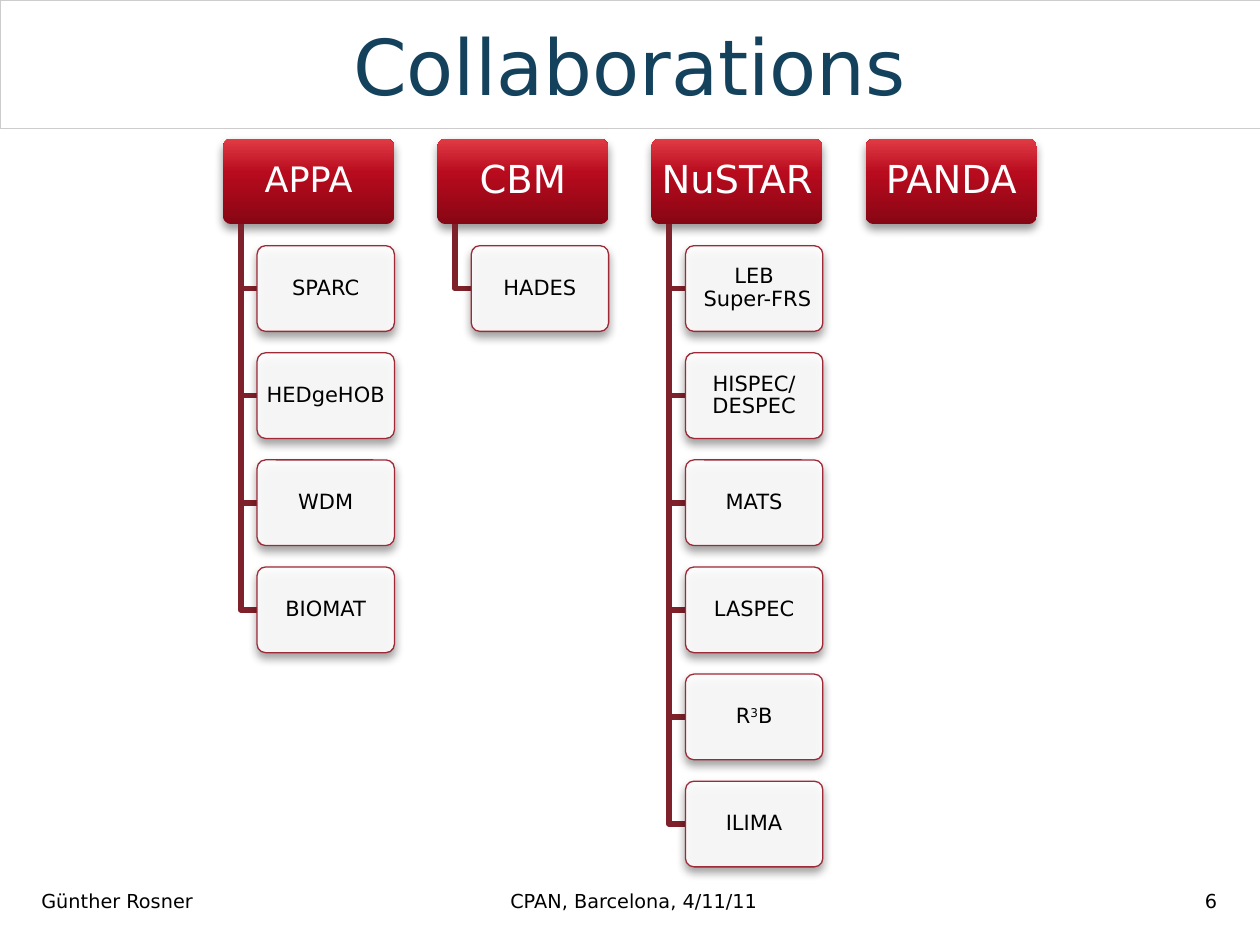
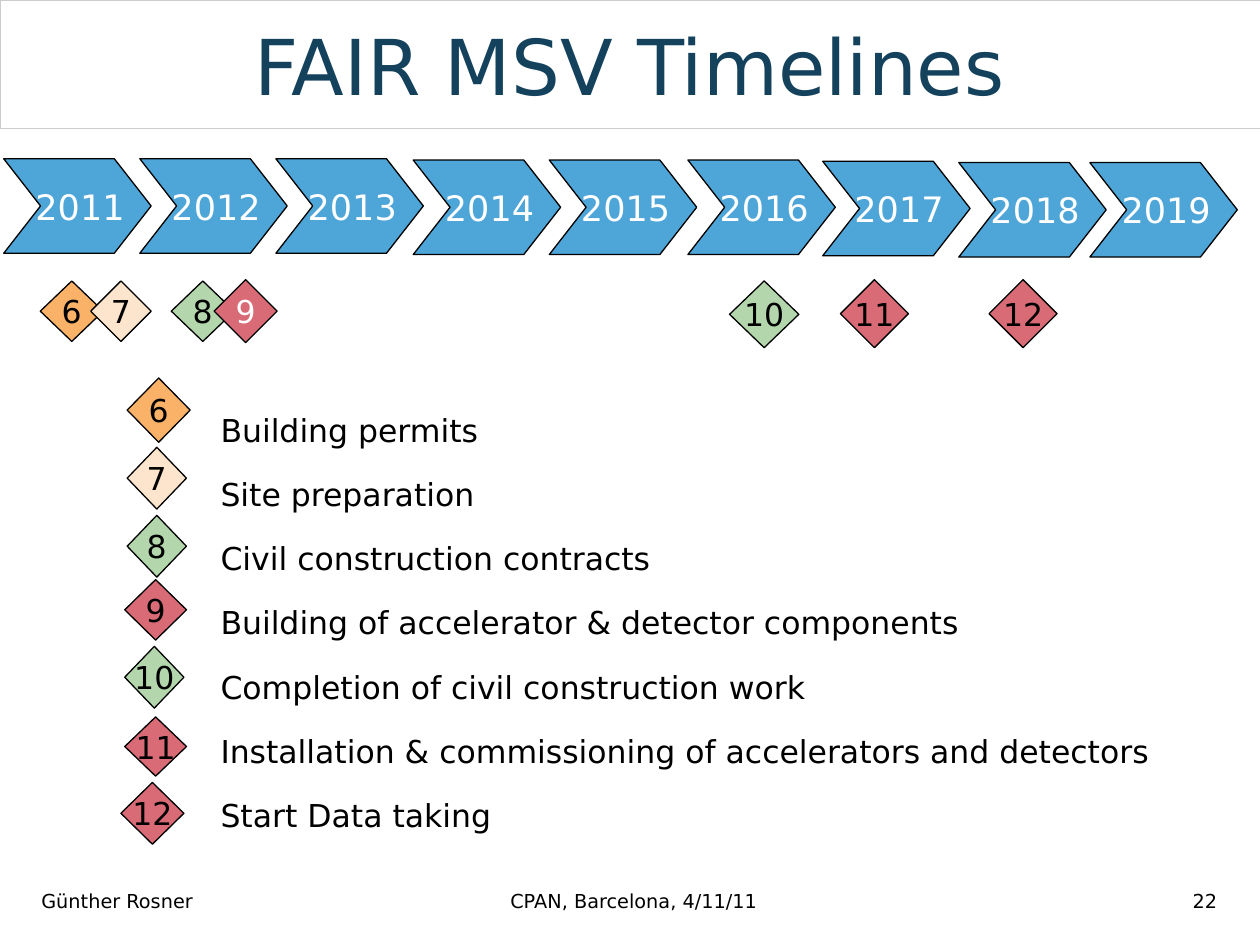
from dataclasses import dataclass

import lxml.etree
import pptx
import pptx.dml.color
import pptx.enum.shapes
import pptx.enum.text
import pptx.oxml.ns
import pptx.util

Inches = pptx.util.Inches
Pt = pptx.util.Pt
RGBColor = pptx.dml.color.RGBColor
Shapes = pptx.enum.shapes.MSO_SHAPE
Align = pptx.enum.text.PP_ALIGN
Anchor = pptx.enum.text.MSO_ANCHOR
qn = pptx.oxml.ns.qn

FONT = "DejaVu Sans"
BLACK = RGBColor(0x00, 0x00, 0x00)
WHITE = RGBColor(0xFF, 0xFF, 0xFF)
TITLE_BLUE = RGBColor(0x14, 0x42, 0x5D)
TITLE_BORDER = RGBColor(0xCC, 0xCC, 0xCC)
HEADER_STOPS = (
    (0, RGBColor(0x87, 0x06, 0x14)),
    (60, RGBColor(0xB8, 0x0B, 0x1E)),
    (100, RGBColor(0xE1, 0x3C, 0x45)),
)
BRANCH_RED = RGBColor(0x7F, 0x21, 0x2B)
CARD_RED = RGBColor(0x9F, 0x29, 0x36)
YEAR_BLUE = RGBColor(0x4E, 0xA5, 0xD8)
ORANGE = RGBColor(0xF9, 0xB2, 0x68)
PEACH = RGBColor(0xFD, 0xE5, 0xCD)
GREEN = RGBColor(0xB3, 0xD6, 0xAC)
ROSE = RGBColor(0xD9, 0x6B, 0x77)

TITLE_LAYOUT, LIST_LAYOUT = 5, 1
COLUMN_LEFT, COLUMN_STEP = 1.77, 1.7
HEADER_TOP, HEADER_WIDTH = 1.1, 1.36
BOX_HEIGHT = 0.68
CARD_TOP, CARD_STEP = 1.95, 0.85
CARD_INDENT, BRANCH_INDENT = 0.27, 0.14


@dataclass
class Box:
    left: float
    top: float
    width: float
    height: float

    def lengths(self) -> tuple:
        return tuple(Inches(v) for v in (self.left, self.top, self.width, self.height))


@dataclass
class Collaboration:
    name: str
    size: int
    members: tuple = ()


@dataclass
class Year:
    label: str
    left: float
    top: float


@dataclass
class Milestone:
    number: int
    box: Box
    color: RGBColor
    text_color: RGBColor = BLACK


COLLABORATIONS = (
    Collaboration("APPA", 20, ("SPARC", "HEDgeHOB", "WDM", "BIOMAT")),
    Collaboration("CBM", 22, ("HADES",)),
    Collaboration("NuSTAR", 22, ("LEB\n Super-FRS", "HISPEC/\nDESPEC", "MATS",
                                 "LASPEC", "R^3^B", "ILIMA")),
    Collaboration("PANDA", 22),
)
YEARS = (
    Year("2011", 0.03, 1.26), Year("2012", 1.11, 1.26), Year("2013", 2.19, 1.26),
    Year("2014", 3.28, 1.27), Year("2015", 4.36, 1.27), Year("2016", 5.46, 1.27),
    Year("2017", 6.53, 1.28), Year("2018", 7.61, 1.29), Year("2019", 8.65, 1.29),
)
MILESTONES = (
    Milestone(6, Box(0.32, 2.23, 0.5, 0.48), ORANGE),
    Milestone(7, Box(0.72, 2.23, 0.48, 0.48), PEACH),
    Milestone(8, Box(1.36, 2.23, 0.5, 0.48), GREEN),
    Milestone(9, Box(1.7, 2.22, 0.5, 0.5), ROSE, WHITE),
    Milestone(10, Box(5.79, 2.23, 0.55, 0.53), GREEN),
    Milestone(11, Box(6.67, 2.22, 0.54, 0.54), ROSE),
    Milestone(12, Box(7.85, 2.22, 0.54, 0.54), ROSE),
    Milestone(6, Box(1.01, 3, 0.5, 0.51), ORANGE),
    Milestone(7, Box(1.01, 3.55, 0.47, 0.49), PEACH),
    Milestone(8, Box(1.01, 4.09, 0.47, 0.49), GREEN),
    Milestone(9, Box(0.99, 4.6, 0.49, 0.48), ROSE),
    Milestone(10, Box(0.99, 5.13, 0.47, 0.49), GREEN),
    Milestone(11, Box(0.99, 5.69, 0.49, 0.47), ROSE),
    Milestone(12, Box(0.96, 6.21, 0.5, 0.49), ROSE),
)
MILESTONE_NAMES = (
    "Building permits",
    "Site preparation",
    "Civil construction contracts",
    "Building of accelerator & detector components",
    "Completion of civil construction work",
    "Installation & commissioning of accelerators and detectors",
    "Start Data taking",
)


def add_run(paragraph, text: str, size: int, color: RGBColor):
    run = paragraph.add_run()
    run.text = text
    run.font.name = FONT
    run.font.size = Pt(size)
    run.font.color.rgb = color
    return run


def add_rich_text(paragraph, text: str, size: int, color: RGBColor) -> None:
    for line_index, line in enumerate(text.split("\n")):
        if line_index:
            paragraph.add_line_break()
        for part_index, part in enumerate(line.split("^")):
            run = add_run(paragraph, part, size, color)
            if part_index % 2:
                run.font._element.set("baseline", "30000")


def write(shape, text: str, size: int, color: RGBColor, align=Align.CENTER,
          insets: tuple = (0.1, 0.05, 0.1, 0.05), wrap: bool = True):
    frame = shape.text_frame
    frame.word_wrap = wrap
    frame.auto_size = pptx.enum.text.MSO_AUTO_SIZE.NONE
    frame.vertical_anchor = Anchor.MIDDLE
    frame.margin_left, frame.margin_top, frame.margin_right, frame.margin_bottom = (
        Inches(inset) for inset in insets)
    paragraph = frame.paragraphs[0]
    paragraph.alignment = align
    add_rich_text(paragraph, text, size, color)
    return paragraph


def place(shape, box: Box) -> None:
    shape.left, shape.top, shape.width, shape.height = box.lengths()


def add_preset(slide, preset, box: Box, adjustment: float | None = None):
    shape = slide.shapes.add_shape(preset, *box.lengths())
    shape.shadow.inherit = False
    if adjustment is not None:
        shape.adjustments[0] = adjustment
    return shape


def outline(shape, color: RGBColor, width: float) -> None:
    shape.line.color.rgb = color
    shape.line.width = Pt(width)


def add_color(parent, color: RGBColor, alpha: int | None = None) -> None:
    element = lxml.etree.SubElement(parent, qn("a:srgbClr"), val=str(color))
    if alpha is not None:
        lxml.etree.SubElement(element, qn("a:alpha"), val=str(alpha * 1000))


def add_shadow(shape) -> None:
    effects = shape.element.spPr.find(qn("a:effectLst"))
    shadow = lxml.etree.SubElement(
        effects, qn("a:outerShdw"), blurRad=str(Pt(5.2)), dist=str(Pt(3)),
        dir="5400000", rotWithShape="0")
    add_color(shadow, BLACK, 40)


def fill_header(shape) -> None:
    shape.fill.gradient()
    shape.fill.gradient_angle = 90
    stops = shape.element.spPr.find(".//" + qn("a:gsLst"))
    for stop in list(stops):
        stops.remove(stop)
    for position, color in HEADER_STOPS:
        stop = lxml.etree.SubElement(stops, qn("a:gs"), pos=str(position * 1000))
        add_color(stop, color)
    shape.line.fill.background()


def add_slide(presentation, layout: int, title: str, number: int):
    slide = presentation.slides.add_slide(presentation.slide_layouts[layout])
    heading = slide.shapes.title
    place(heading, Box(0, 0, 10, 1.02))
    outline(heading, TITLE_BORDER, 0.25)
    write(heading, title, 44, TITLE_BLUE)
    for left, width, text, align in (
        (0.23, 2.33, "Günther Rosner", Align.LEFT),
        (2.74, 4.58, "CPAN, Barcelona, 4/11/11", Align.CENTER),
        (7.43, 2.33, str(number), Align.RIGHT),
    ):
        footer = slide.shapes.add_textbox(*Box(left, 6.95, width, 0.4).lengths())
        write(footer, text, 11, BLACK, align)
    return slide


def add_branch(slide, left: float, end_y: float) -> None:
    x, y = Inches(left + BRANCH_INDENT), Inches(HEADER_TOP + BOX_HEIGHT)
    builder = slide.shapes.build_freeform(x, y)
    builder.add_line_segments(
        [(x, Inches(end_y)), (Inches(left + CARD_INDENT), Inches(end_y))], close=False)
    branch = builder.convert_to_shape()
    branch.shadow.inherit = False
    branch.fill.background()
    outline(branch, BRANCH_RED, 3.35)


def add_card(slide, box: Box, text: str) -> None:
    card = add_preset(slide, Shapes.ROUNDED_RECTANGLE, box, 0.1)
    card.fill.solid()
    card.fill.fore_color.rgb = WHITE
    color = card.element.spPr.find(qn("a:solidFill")).find(qn("a:srgbClr"))
    lxml.etree.SubElement(color, qn("a:alpha"), val="90000")
    outline(card, CARD_RED, 0.75)
    add_shadow(card)
    write(card, text, 12, BLACK, insets=(0.03, 0.02, 0.03, 0.02)).line_spacing = 0.9


def add_collaboration(slide, left: float, group: Collaboration) -> None:
    header = add_preset(slide, Shapes.ROUNDED_RECTANGLE,
                        Box(left, HEADER_TOP, HEADER_WIDTH, BOX_HEIGHT), 0.1)
    fill_header(header)
    add_shadow(header)
    write(header, group.name, group.size, WHITE,
          insets=(0.03, 0.03, 0.03, 0.03), wrap=False).line_spacing = 0.9
    for row, member in enumerate(group.members):
        top = CARD_TOP + row * CARD_STEP
        add_branch(slide, left, top + BOX_HEIGHT / 2)
        add_card(slide, Box(left + CARD_INDENT, top, HEADER_WIDTH - CARD_INDENT,
                            BOX_HEIGHT), member)


def add_year(slide, year: Year) -> None:
    chevron = add_preset(slide, Shapes.CHEVRON, Box(year.left, year.top, 1.17, 0.75), 0.39)
    chevron.fill.solid()
    chevron.fill.fore_color.rgb = YEAR_BLUE
    outline(chevron, BLACK, 0.75)
    write(chevron, year.label, 20, WHITE, insets=(0.14, 0.05, 0.1, 0.05), wrap=False)


def add_milestone(slide, milestone: Milestone) -> None:
    diamond = add_preset(slide, Shapes.DIAMOND, milestone.box)
    diamond.fill.solid()
    diamond.fill.fore_color.rgb = milestone.color
    outline(diamond, BLACK, 0.75)
    write(diamond, str(milestone.number), 18, milestone.text_color, wrap=False)


def fill_milestone_list(body) -> None:
    place(body, Box(1.65, 3, 7.64, 3.71))
    frame = body.text_frame
    frame.auto_size = pptx.enum.text.MSO_AUTO_SIZE.NONE
    for index, name in enumerate(MILESTONE_NAMES):
        paragraph = frame.add_paragraph() if index else frame.paragraphs[0]
        properties = paragraph._p.get_or_add_pPr()
        properties.set("marL", "0")
        properties.set("indent", "0")
        lxml.etree.SubElement(properties, qn("a:buNone"))
        paragraph.line_spacing = 1.7
        paragraph.space_before = Pt(0)
        add_run(paragraph, name, 18, BLACK)


def main() -> None:
    presentation = pptx.Presentation()
    presentation.slide_width = Inches(10)
    presentation.slide_height = Inches(7.5)

    slide = add_slide(presentation, TITLE_LAYOUT, "Collaborations", 6)
    for column, group in enumerate(COLLABORATIONS):
        add_collaboration(slide, COLUMN_LEFT + column * COLUMN_STEP, group)

    slide = add_slide(presentation, LIST_LAYOUT, "FAIR MSV Timelines", 22)
    fill_milestone_list(slide.placeholders[1])
    for year in YEARS:
        add_year(slide, year)
    for milestone in MILESTONES:
        add_milestone(slide, milestone)

    presentation.save("out.pptx")


if __name__ == "__main__":
    main()
